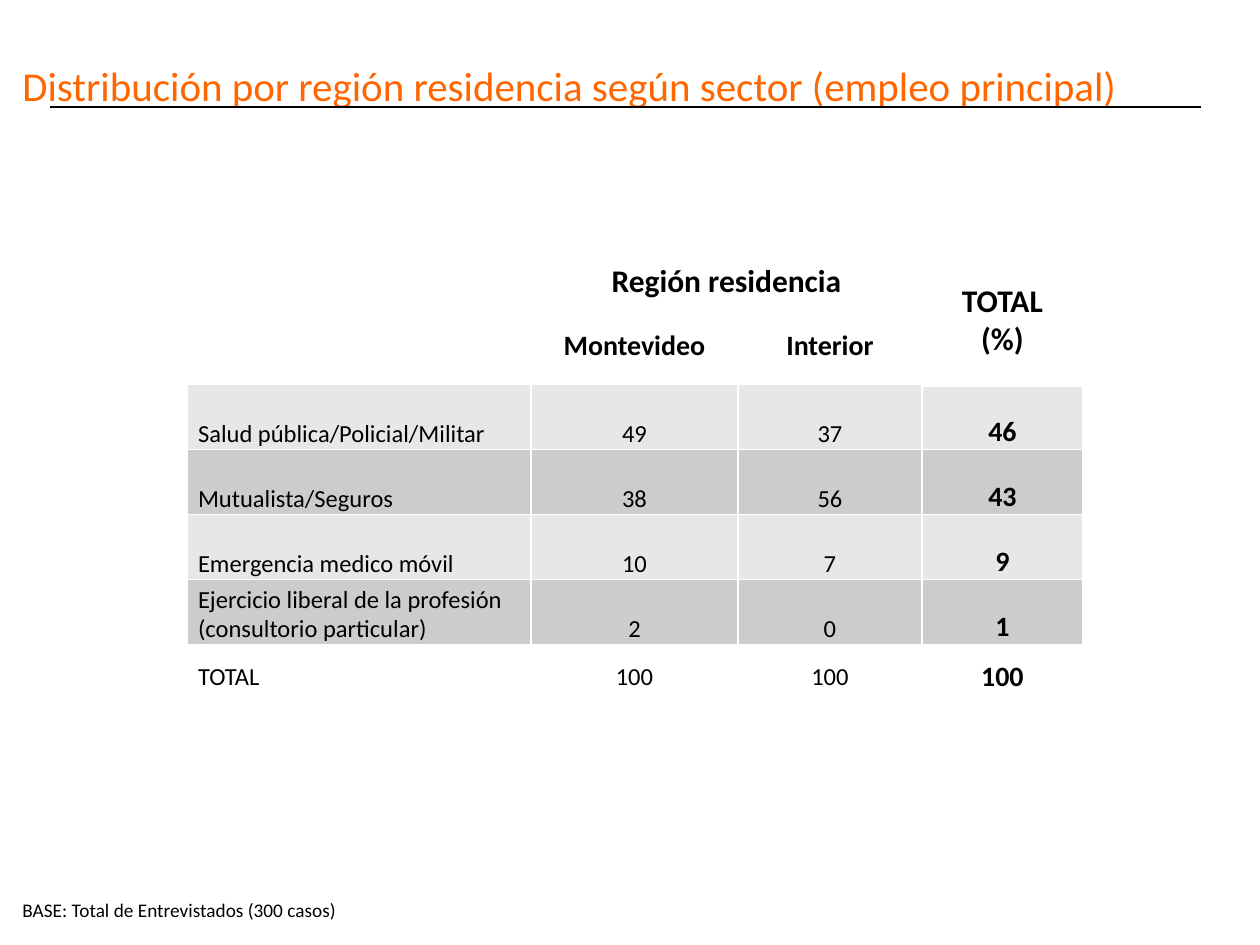
from dataclasses import dataclass
from typing import Any

from lxml.etree import SubElement
from pptx import Presentation
from pptx.dml.color import RGBColor
from pptx.enum.shapes import MSO_CONNECTOR
from pptx.enum.text import MSO_ANCHOR, PP_ALIGN
from pptx.oxml.ns import qn
from pptx.util import Emu, Pt

DPI = 126
HUES = {"ink": "000000", "title": "FF6600", "edge": "FFFFFF",
        "light": "E7E7E7", "dark": "CCCCCC"}
COLS = (344, 207, 184, 161)
ROWS = (50, 78, 65, 65, 65, 65, 65)
DATA = (
    ("Salud pública/Policial/Militar", 49, 37, 46),
    ("Mutualista/Seguros", 38, 56, 43),
    ("Emergencia medico móvil", 10, 7, 9),
    ("Ejercicio liberal de la profesión (consultorio particular)", 2, 0, 1),
    ("TOTAL", 100, 100, 100),
)
MIDDLE, BOTTOM = MSO_ANCHOR.MIDDLE, MSO_ANCHOR.BOTTOM


@dataclass
class Label:
    text: str
    box: tuple[int, int, int, int]
    size: float
    hue: str
    top: int


@dataclass
class Entry:
    row: int
    col: int
    text: str
    size: int
    bold: bool
    anchor: Any = MIDDLE
    fill: str = ""


LABELS = (
    Label("BASE: Total de Entrevistados (300 casos)",
          (10, 892, 1152, 38), 11, "ink", 6),
    Label("Distribución por región residencia según sector (empleo principal)",
          (10, 61, 1250, 87), 23.4, "title", 0),
)
HEADS = (
    Entry(0, 1, "Región residencia", 18, True),
    Entry(0, 3, "TOTAL\n(%)", 18, True),
    Entry(1, 1, "Montevideo", 16, True),
    Entry(1, 2, "Interior", 16, True),
)


def px(num: int) -> Emu:
    return Emu(round(num * 914400 / DPI))


def tint(name: str) -> RGBColor:
    return RGBColor.from_string(HUES[name])


def assign(item: Any, form: dict[str, Any]) -> None:
    for key, val in form.items():
        setattr(item, key, val)


def style(font: Any, size: float, hue: str, bold: bool = False) -> None:
    assign(font, {"name": "Calibri", "size": Pt(size), "bold": bold})
    font.color.rgb = tint(hue)


def write(slide: Any, label: Label) -> None:
    frame = slide.shapes.add_textbox(*map(px, label.box)).text_frame
    assign(frame, {"word_wrap": True, "margin_top": px(label.top),
                   "vertical_anchor": MSO_ANCHOR.TOP, "text": label.text})
    style(frame.paragraphs[0].runs[0].font, label.size, label.hue)


def rule(slide: Any) -> None:
    line = slide.shapes.add_connector(
        MSO_CONNECTOR.STRAIGHT, px(50), px(107), px(1201), px(107))
    line.line.color.rgb = tint("ink")
    line.line.width = Pt(0.75)
    SubElement(line._element.spPr, qn("a:effectLst"))


def border(cell: Any, row: int) -> None:
    props = cell._tc.get_or_add_tcPr()
    for side in "LRTB":
        wide = 3 if row == 0 and side == "B" else 1
        line = SubElement(props, qn(f"a:ln{side}"), w=str(Pt(wide)))
        fill = SubElement(line, qn("a:solidFill"))
        SubElement(fill, qn("a:srgbClr"), val=HUES["edge"])


def enter(table: Any, entry: Entry) -> None:
    cell = table.cell(entry.row, entry.col)
    assign(cell, {"text": entry.text, "vertical_anchor": entry.anchor,
                  "margin_left": px(1), "margin_right": px(1),
                  "margin_top": px(1), "margin_bottom": 0})
    for para in cell.text_frame.paragraphs:
        if entry.col:
            para.alignment = PP_ALIGN.CENTER
        else:
            assign(para, {"alignment": PP_ALIGN.LEFT})
            para._p.get_or_add_pPr().set("marL", str(px(10)))
        for run in para.runs:
            style(run.font, entry.size, "ink", entry.bold)
    if entry.fill:
        cell.fill.solid()
        cell.fill.fore_color.rgb = tint(entry.fill)


def body() -> list[Entry]:
    cells = []
    for row, vals in enumerate(DATA, 2):
        last = row == len(ROWS) - 1
        fill = "" if last else ("light", "dark")[row % 2]
        for col, val in enumerate(vals):
            bold = col == 3
            cells.append(Entry(row, col, str(val), 16 if bold else 14, bold,
                               MIDDLE if last else BOTTOM, fill))
    return cells


def grid(slide: Any) -> None:
    table = slide.shapes.add_table(
        len(ROWS), len(COLS), px(187), px(256),
        px(sum(COLS)), px(sum(ROWS))).table
    assign(table, {"first_row": False, "horz_banding": False})
    for col, wide in zip(table.columns, COLS):
        col.width = px(wide)
    for num, high in enumerate(ROWS):
        table.rows[num].height = px(high)
        for cell in table.rows[num].cells:
            border(cell, num)
            cell.fill.background()
    table.cell(0, 1).merge(table.cell(0, 2))
    table.cell(0, 3).merge(table.cell(1, 3))
    for entry in (*HEADS, *body()):
        enter(table, entry)


def main() -> None:
    deck = Presentation()
    assign(deck, {"slide_width": px(1260), "slide_height": px(945)})
    slide = deck.slides.add_slide(deck.slide_layouts[6])
    for label in LABELS:
        write(slide, label)
    rule(slide)
    grid(slide)
    deck.save("out.pptx")


if __name__ == "__main__":
    main()
